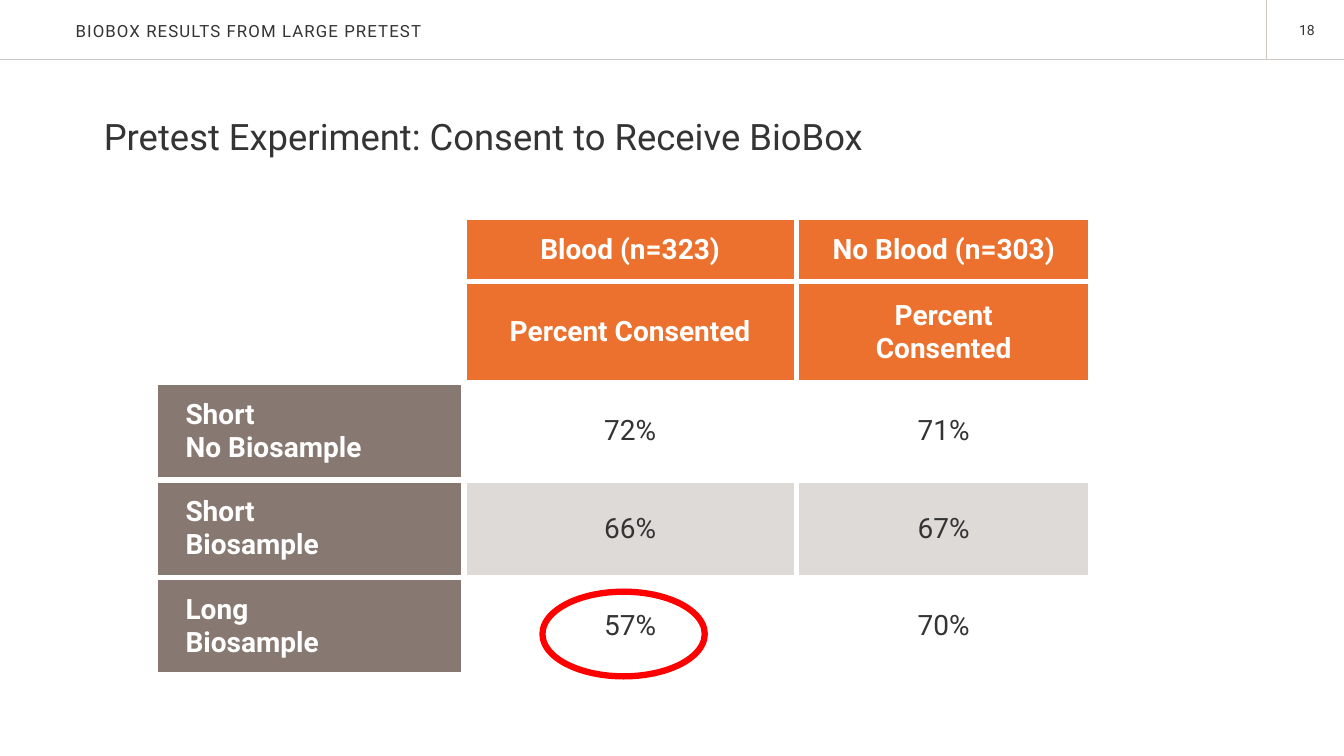
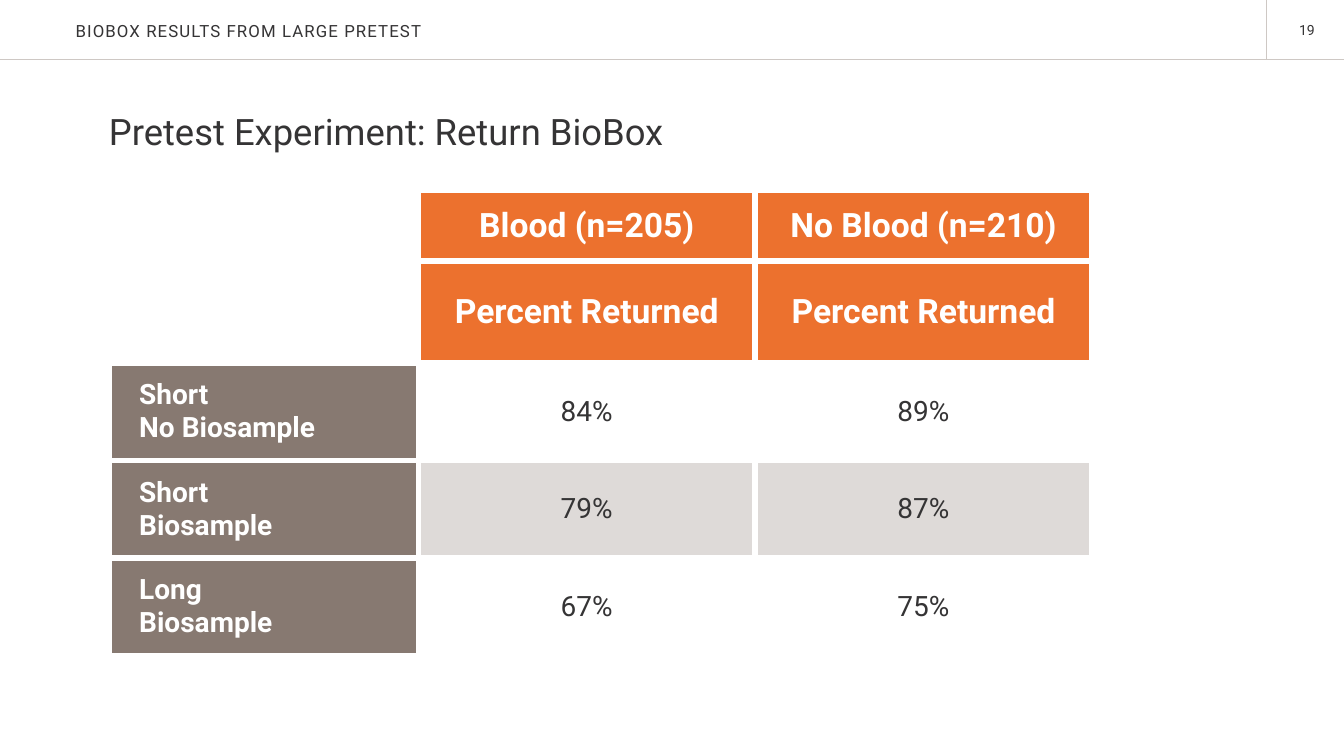
from lxml import etree
from pptx import Presentation
from pptx.dml.color import RGBColor
from pptx.enum.shapes import MSO_CONNECTOR, MSO_SHAPE
from pptx.enum.text import MSO_ANCHOR, PP_ALIGN
from pptx.oxml.ns import qn
from pptx.util import Inches, Pt

LEFT, CENTER, RIGHT = PP_ALIGN.LEFT, PP_ALIGN.CENTER, PP_ALIGN.RIGHT
TOP, MIDDLE = MSO_ANCHOR.TOP, MSO_ANCHOR.MIDDLE
STRAIGHT, OVAL = MSO_CONNECTOR.STRAIGHT, MSO_SHAPE.OVAL

FONT = "Roboto"
INK = RGBColor(0x35, 0x34, 0x35)
WHITE = RGBColor(0xFF, 0xFF, 0xFF)
RULE = RGBColor(0xCE, 0xC8, 0xC4)
ORANGE = RGBColor(0xEC, 0x71, 0x2E)
TAUPE = RGBColor(0x87, 0x79, 0x71)
BAND = RGBColor(0xDE, 0xDA, 0xD8)
RED = RGBColor(0xFF, 0x00, 0x00)

SLIDE_W, SLIDE_H = 13.33, 7.5
HEADER_H, NUMBER_X = 0.59, 12.56
RUNNING_TITLE = "BIOBOX RESULTS FROM LARGE PRETEST"
CONDITIONS = ["Short\nNo Biosample", "Short\nBiosample", "Long\nBiosample"]
CONDITION_H = 0.95


def write(frame, text, size=20, color=INK, bold=False, align=LEFT, spacing=None):
    """Fill a text frame, one paragraph for each line of text."""
    frame.word_wrap = True
    for index, line in enumerate(text.split("\n")):
        paragraph = frame.add_paragraph() if index else frame.paragraphs[0]
        paragraph.alignment = align
        run = paragraph.add_run()
        run.text = line
        run.font.name, run.font.size, run.font.bold = FONT, Pt(size), bold
        run.font.color.rgb = color
        if spacing:
            run.font._element.set("spc", str(round(spacing * 100)))


class Deck:
    def __init__(self):
        self.prs = Presentation()
        self.prs.slide_width, self.prs.slide_height = Inches(SLIDE_W), Inches(SLIDE_H)
        self.slide = None

    def new_slide(self, number):
        self.slide = self.prs.slides.add_slide(self.prs.slide_layouts[6])
        # Header band
        self.line(0, HEADER_H, SLIDE_W, HEADER_H)
        self.line(NUMBER_X, 0, NUMBER_X, HEADER_H)
        self.text(RUNNING_TITLE, 0.75, 0.01, 5.27, 0.6, anchor=MIDDLE, size=12, spacing=0.8)
        self.text(str(number), 12.64, 0.21, 0.4, 0.17, size=10, align=RIGHT)

    def line(self, x1, y1, x2, y2):
        rule = self.slide.shapes.add_connector(
            STRAIGHT, Inches(x1), Inches(y1), Inches(x2), Inches(y2))
        rule.line.color.rgb, rule.line.width = RULE, Pt(0.65)
        etree.SubElement(rule._element.spPr, qn("a:effectLst"))

    def text(self, text, x, y, w, h, anchor=TOP, **style):
        frame = self.slide.shapes.add_textbox(
            Inches(x), Inches(y), Inches(w), Inches(h)).text_frame
        frame.margin_left = frame.margin_right = frame.margin_top = frame.margin_bottom = 0
        frame.vertical_anchor = anchor
        write(frame, text, **style)

    def heading(self, text, x, y):
        self.text(text, x, y, 10.7, 1, size=26)

    def ring(self, x, y, w, h):
        ring = self.slide.shapes.add_shape(OVAL, Inches(x), Inches(y), Inches(w), Inches(h))
        ring.shadow.inherit = False
        ring.fill.background()
        ring.line.color.rgb, ring.line.width = RED, Pt(4.5)

    def cell(self, cell, text, fill, **style):
        # White borders form the gaps between cells
        properties = cell._tc.get_or_add_tcPr()
        for side in ("lnL", "lnR", "lnT", "lnB"):
            border = etree.SubElement(properties, qn(f"a:{side}"), w=str(Pt(4.5)))
            solid = etree.SubElement(border, qn("a:solidFill"))
            etree.SubElement(solid, qn("a:srgbClr"), val=str(WHITE))
        cell.margin_left = cell.margin_right = Inches(0.3)
        cell.margin_top = cell.margin_bottom = Inches(0.15)
        cell.vertical_anchor = MIDDLE
        if fill is None:
            cell.fill.background()
            return
        cell.fill.solid()
        cell.fill.fore_color.rgb = fill
        write(cell.text_frame, text, **style)

    def results(self, x, y, widths, header_heights, headers, values, header_size):
        """Two header rows above one row for each condition."""
        heights = header_heights + [CONDITION_H] * len(values)
        table = self.slide.shapes.add_table(
            len(heights), len(widths), Inches(x), Inches(y),
            Inches(sum(widths)), Inches(sum(heights))).table
        table.first_row = table.horz_banding = False
        for column, width in zip(table.columns, widths):
            column.width = Inches(width)
        for row, height in zip(table.rows, heights):
            row.height = Inches(height)

        for r, labels in enumerate(headers):
            self.cell(table.cell(r, 0), "", None)
            for c, label in enumerate(labels, 1):
                self.cell(table.cell(r, c), label, ORANGE, size=header_size,
                          color=WHITE, bold=True, align=CENTER)
        for i, (condition, percents) in enumerate(zip(CONDITIONS, values)):
            r = i + len(headers)
            self.cell(table.cell(r, 0), condition, TAUPE, color=WHITE, bold=True)
            for c, percent in enumerate(percents, 1):
                self.cell(table.cell(r, c), f"{percent}%", BAND if i % 2 else WHITE,
                          align=CENTER)


def main():
    deck = Deck()

    # Consent
    deck.new_slide(18)
    deck.results(1.54, 2.16, [3.06, 3.3, 2.92], [0.62, 1],
                 [["Blood (n=323)", "No Blood (n=303)"], ["Percent Consented"] * 2],
                 [(72, 71), (66, 67), (57, 70)], header_size=20)
    deck.heading("Pretest Experiment: Consent to Receive BioBox", 1.03, 1.13)
    deck.ring(5.38, 5.87, 1.61, 0.84)

    # Return
    deck.new_slide(19)
    deck.results(1.08, 1.89, [3.07, 3.34, 3.34], [0.7, 1.01],
                 [["Blood (n=205)", "No Blood (n=210)"], ["Percent Returned"] * 2],
                 [(84, 89), (79, 87), (67, 75)], header_size=24)
    deck.heading("Pretest Experiment: Return BioBox", 1.08, 1.08)

    deck.prs.save("out.pptx")


if __name__ == "__main__":
    main()
